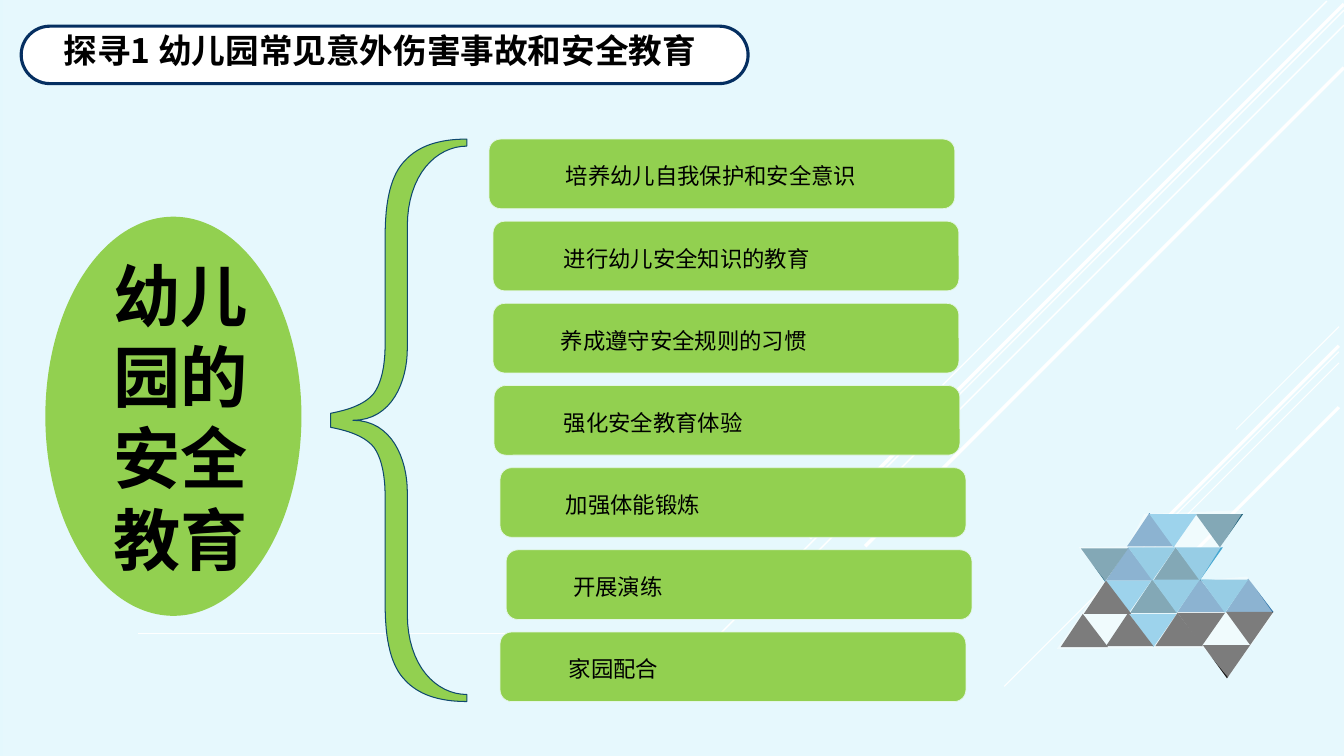
from lxml.etree import SubElement
from pptx import Presentation
from pptx.dml.color import RGBColor
from pptx.enum.shapes import MSO_CONNECTOR, MSO_SHAPE
from pptx.enum.text import MSO_ANCHOR, MSO_AUTO_SIZE, PP_ALIGN
from pptx.oxml.ns import qn
from pptx.util import Inches, Pt

FONT = "Noto Sans CJK SC"
SKY = RGBColor(0xE4, 0xF8, 0xFD)
WHITE = RGBColor(0xFF, 0xFF, 0xFF)
BLACK = RGBColor(0, 0, 0)
GREEN = RGBColor(0x92, 0xD0, 0x50)
PALE = RGBColor(0xE3, 0xF6, 0xE6)
NAVY = RGBColor(0x05, 0x2F, 0x61)
EDGE = RGBColor(0x0F, 0x49, 0x6F)
BLUE = RGBColor(0x1F, 0x6B, 0xA5)
TEAL = RGBColor(0x0E, 0x56, 0x71)
CYAN = RGBColor(0x40, 0xAB, 0xDB)
AQUA = RGBColor(0x34, 0x9F, 0xCD)

TITLE = "探寻1 幼儿园常见意外伤害事故和安全教育"
TOPIC = "幼儿园的安全教育"
# Each bar: label, bar left, label left
BARS = [
    ("培养幼儿自我保护和安全意识", 4.85, 5.58),
    ("进行幼儿安全知识的教育", 4.89, 5.56),
    ("养成遵守安全规则的习惯", 4.89, 5.53),
    ("强化安全教育体验", 4.9, 5.56),
    ("加强体能锻炼", 4.96, 5.58),
    ("开展演练", 5.02, 5.65),
    ("家园配合", 4.96, 5.61),
]
# Each ray: right end, top, drop, width
RAYS = [
    (13.28, 3.24, 1.02, 0.75), (13.28, 3.49, 3.32, 0.75),
    (13.28, 3.6, 2.11, 0.75), (13.28, 3.43, 1.95, 2.25),
    (13.28, 4.04, 1.42, 2.25), (13.16, 0.01, 4.16, 1),
    (13.33, 0.1, 6.65, 1), (13.33, 0.25, 5.42, 1),
    (13.33, 0.04, 5.3, 2.5), (13.33, 0.67, 4.75, 2.5),
]
UP = [(0, 0), (0.25, 0.33), (-0.22, 0.33)]
DOWN = [(0, 0), (-0.24, -0.33), (0.23, -0.33)]
TILES = [
    (UP, BLUE, [(11.4, 5.09), (11.19, 5.43), (12.38, 5.74), (11.9, 5.74)]),
    (UP, TEAL, [(11.66, 5.43), (11.43, 5.75)]),
    (DOWN, TEAL, [(12.1, 5.43), (10.96, 5.77)]),
    (DOWN, CYAN, [(11.64, 5.43), (11.19, 6.09), (11.44, 6.42)]),
    (DOWN, AQUA, [(11.9, 5.76), (11.43, 5.76), (12.15, 6.08), (11.67, 6.08)]),
    (DOWN, BLACK, [(12.4, 6.4), (11.92, 6.41), (12.17, 6.73)]),
    (UP, BLACK, [(11.68, 6.08), (10.97, 5.76), (10.74, 6.09), (11.19, 6.08)]),
]
VEIL = [(11.18, 5.42), (11.35, 5.1), (12.34, 5.06), (11.9, 5.76),
        (12.37, 5.72), (12.63, 6.09), (12.18, 6.72), (11.94, 6.43),
        (10.48, 6.44), (10.96, 5.76), (10.7, 5.43)]
# Upper half of the brace: one point is a line, three are a curve
TIP = (3.28, 4.1)
HALF = [
    [(3.49, 4.06), (3.63, 4), (3.71, 3.9)],
    [(3.78, 3.8), (3.82, 3.64), (3.82, 3.41)],
    [(3.82, 2.35)],
    [(3.82, 1.98), (3.88, 1.73), (4.02, 1.59)],
    [(4.15, 1.45), (4.35, 1.38), (4.63, 1.38)],
    [(4.63, 1.45)],
    [(4.33, 1.45), (4.04, 1.73), (4.04, 2.25)],
    [(4.04, 3.46)],
    [(4.04, 3.78), (3.89, 4.17), (3.5, 4.17)],
]
AXIS = 4.17
STEPS = 16


def paint(shape, fill, line=None, width=0.5, alpha=None):
    """Set fill, outline and opacity, without shadow."""
    shape.shadow.inherit = False
    shape.fill.solid()
    shape.fill.fore_color.rgb = fill
    if alpha:
        tint = shape._element.spPr.find(".//" + qn("a:srgbClr"))
        SubElement(tint, qn("a:alpha")).set("val", str(alpha * 1000))
    if line is None:
        shape.line.fill.background()
    else:
        shape.line.color.rgb = line
        shape.line.width = Pt(width)
    return shape


def block(kind, left, top, width, height):
    """Add a preset shape measured in inches."""
    return slide.shapes.add_shape(kind, *map(Inches, (left, top, width, height)))


def outline(points):
    """Add a closed shape through points in inches."""
    spots = [(Inches(x), Inches(y)) for x, y in points]
    pen = slide.shapes.build_freeform(*spots[0])
    pen.add_line_segments(spots[1:], close=True)
    return pen.convert_to_shape()


def rule(x1, y1, x2, y2, width):
    """Add a white line."""
    line = slide.shapes.add_connector(
        MSO_CONNECTOR.STRAIGHT, *map(Inches, (x1, y1, x2, y2)))
    line.line.color.rgb = WHITE
    line.line.width = Pt(width)
    SubElement(line._element.spPr, qn("a:effectLst"))


def write(shape, text, size, align, bold=False, left=0, top=0):
    """Put one formatted run in a shape."""
    frame = shape.text_frame
    frame.word_wrap = True
    frame.auto_size = MSO_AUTO_SIZE.NONE
    frame.vertical_anchor = MSO_ANCHOR.MIDDLE
    frame.margin_left, frame.margin_top = Inches(left), Inches(top)
    frame.margin_right = frame.margin_bottom = 0
    para = frame.paragraphs[0]
    para.alignment = align
    run = para.add_run()
    run.text = text
    run.font.size, run.font.bold = Pt(size), bold
    run.font.color.rgb = BLACK
    run.font.name = FONT
    SubElement(run._r.get_or_add_rPr(), qn("a:ea")).set("typeface", FONT)
    return para


def trace(start, parts):
    """Return points along lines and cubic curves."""
    points = [start]
    for part in parts:
        if len(part) == 1:
            points += part
            continue
        knots = [points[-1], *part]
        for step in range(1, STEPS + 1):
            t = step / STEPS
            mix = ((1 - t) ** 3, 3 * t * (1 - t) ** 2, 3 * t * t * (1 - t), t ** 3)
            points.append(tuple(
                sum(m * knot[axis] for m, knot in zip(mix, knots))
                for axis in (0, 1)))
    return points


deck = Presentation()
deck.slide_width, deck.slide_height = Inches(13.33), Inches(7.5)
slide = deck.slides.add_slide(deck.slide_layouts[5])
slide.background.fill.solid()
slide.background.fill.fore_color.rgb = SKY

for x, y, drop, width in RAYS:
    rule(x, y, x - drop, y + drop, width)
for form, color, spots in TILES:
    for x, y in spots:
        paint(outline([(x + dx, y + dy) for dx, dy in form]), color)
paint(block(MSO_SHAPE.RECTANGLE, 0.03, 0, 13.3, 7.5), WHITE, alpha=9)
paint(outline(VEIL), WHITE, alpha=44)

oval = paint(block(MSO_SHAPE.OVAL, 0.45, 2.15, 2.54, 3.96), GREEN)
topic = write(oval, TOPIC, 48, PP_ALIGN.CENTER, bold=True, left=0.15)
topic.line_spacing = Pt(58)
rule(1.37, 6.28, 5.46, 6.28, 0.5)

upper = trace(TIP, HALF)
lower = [(x, 2 * AXIS - y) for x, y in reversed(upper)]
paint(outline(upper + lower), GREEN, EDGE, 0.75)

for row, (label, left, start) in enumerate(BARS):
    bar = block(MSO_SHAPE.ROUNDED_RECTANGLE, left, 1.38 + row * 0.815, 4.62, 0.69)
    paint(bar, GREEN, PALE)
    write(bar, label, 16, PP_ALIGN.LEFT, left=start - left, top=0.04)

pill = block(MSO_SHAPE.ROUNDED_RECTANGLE, 0.21, 0.26, 7.21, 0.57)
pill.adjustments[0] = 0.5
paint(pill, WHITE, NAVY, 2.25)
title = slide.shapes.title
title.left, title.top = Inches(0.53), Inches(0.25)
title.width, title.height = Inches(11.12), Inches(0.5)
write(title, TITLE, 24, PP_ALIGN.LEFT, bold=True, left=0.1)
pill._element.addnext(title._element)

deck.save("out.pptx")
